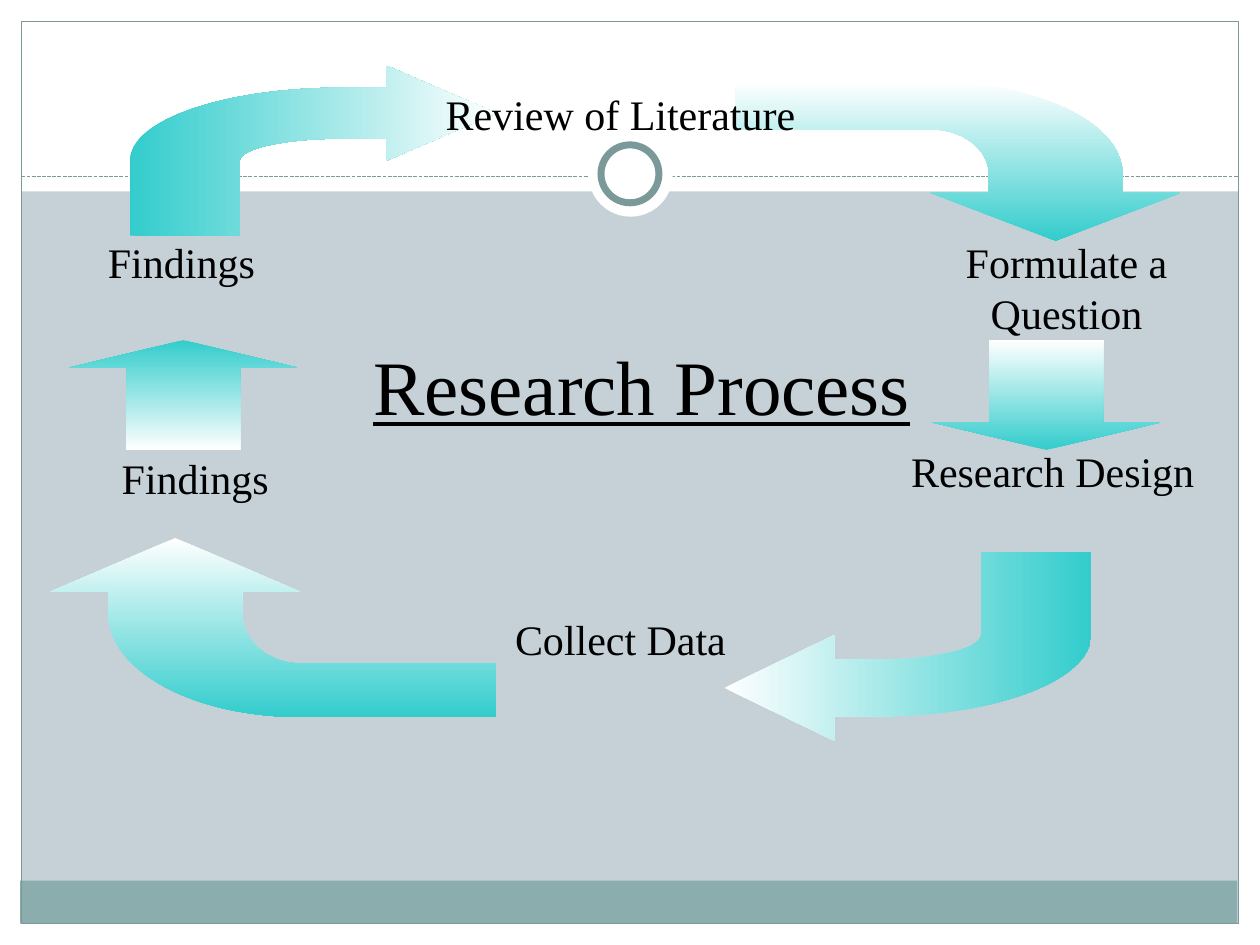
from lxml import etree
from pptx import Presentation
from pptx.dml.color import RGBColor
from pptx.enum.dml import MSO_LINE
from pptx.enum.shapes import MSO_CONNECTOR, MSO_SHAPE
from pptx.enum.text import MSO_ANCHOR, PP_ALIGN
from pptx.oxml.ns import qn
from pptx.util import Inches, Pt

RECTANGLE, OVAL, UP_ARROW = MSO_SHAPE.RECTANGLE, MSO_SHAPE.OVAL, MSO_SHAPE.UP_ARROW
STRAIGHT = MSO_CONNECTOR.STRAIGHT
DASH = MSO_LINE.SQUARE_DOT
TOP = MSO_ANCHOR.TOP
CENTER = PP_ALIGN.CENTER

WHITE = RGBColor(0xFF, 0xFF, 0xFF)
BLACK = RGBColor(0x00, 0x00, 0x00)
MIST = RGBColor(0xC5, 0xD1, 0xD7)
SAGE = RGBColor(0x8C, 0xAD, 0xAE)
SLATE = RGBColor(0x7C, 0x99, 0x9A)
TEAL = RGBColor(0x33, 0xCC, 0xCC)
FONT = "Times New Roman"

RIGHTWARD, DOWNWARD = 0, 270

OUTER_BEND = [(0.68, 0), (0.87, 0.26), (0.87, 0.58)]
INNER_BEND = [(0.57, 0.42), (0.51, 0.3), (0.44, 0.3)]
ARROW_HEAD = [(0.87, 0.7), (1, 0.7), (0.72, 1), (0.44, 0.7), (0.57, 0.7)]
BENT_ARROW = [(0, 0), (0.44, 0), *OUTER_BEND, *ARROW_HEAD, (0.57, 0.58), *INNER_BEND, (0, 0.3)]
BEND_STARTS = [BENT_ARROW.index(bend[0]) for bend in (OUTER_BEND, INNER_BEND)]


def write_text(box, text, size=24, underline=None):
    frame = box.text_frame
    frame.word_wrap = True
    frame.vertical_anchor = TOP
    para = frame.paragraphs[0]
    para.alignment = CENTER
    span = para.add_run()
    span.text = text
    span.font.name = FONT
    span.font.size = Pt(size)
    span.font.underline = underline
    span.font.color.rgb = BLACK


def round_bends(shape):
    outline = next(shape._element.iter(qn("a:path")))
    steps = list(outline)
    for start in BEND_STARTS:
        curve = etree.Element(qn("a:cubicBezTo"))
        steps[start].addprevious(curve)
        for step in steps[start:start + 3]:
            curve.append(step[0])
            outline.remove(step)


class SlideBuilder:
    """Draws styled elements on the current slide."""

    def __init__(self, page):
        self.page = page
        self.shapes = page.shapes

    def background(self, color):
        fill = self.page.background.fill
        fill.solid()
        fill.fore_color.rgb = color

    def title(self, text, left, top, width, height, **style):
        box = self.shapes.title
        box.left, box.top = Inches(left), Inches(top)
        box.width, box.height = Inches(width), Inches(height)
        write_text(box, text, **style)

    def label(self, text, left, top, width, height=0.5):
        box = self.shapes.add_textbox(*map(Inches, (left, top, width, height)))
        write_text(box, text)

    def panel(self, kind, left, top, width, height, fill=None, line=None, weight=0.75):
        shape = self.shapes.add_shape(kind, *map(Inches, (left, top, width, height)))
        shape.shadow.inherit = False
        if fill is None:
            shape.fill.background()
        else:
            shape.fill.solid()
            shape.fill.fore_color.rgb = fill
        if line is None:
            shape.line.fill.background()
        else:
            shape.line.color.rgb = line
            shape.line.width = Pt(weight)
        return shape

    def dashed_rule(self, left, right, top):
        rule = self.shapes.add_connector(STRAIGHT, *map(Inches, (left, top, right, top)))
        rule.line.color.rgb = SLATE
        rule.line.width = Pt(0.75)
        rule.line.dash_style = DASH
        etree.SubElement(rule._element.spPr, qn("a:effectLst"))

    def shade(self, shape, colors, angle):
        shape.fill.gradient()
        shape.fill.gradient_angle = angle
        for stop, color in zip(shape.fill.gradient_stops, colors):
            stop.color.rgb = color

    def block_arrow(self, left, top, rotation=0):
        arrow = self.panel(UP_ARROW, left, top, 1.81, 0.87)
        arrow.adjustments[0], arrow.adjustments[1] = 0.5, 0.25
        arrow.rotation = rotation
        self.shade(arrow, (TEAL, WHITE), DOWNWARD)

    def bent_arrow(self, corner, along, across, colors, angle):
        points = [
            tuple(Inches(corner[i] + u * along[i] + v * across[i]) for i in (0, 1))
            for u, v in BENT_ARROW
        ]
        builder = self.shapes.build_freeform(*points[0])
        builder.add_line_segments(points[1:], close=True)
        arrow = builder.convert_to_shape()
        round_bends(arrow)
        arrow.shadow.inherit = False
        arrow.line.fill.background()
        self.shade(arrow, colors, angle)


def main():
    deck = Presentation()
    deck.slide_width, deck.slide_height = Inches(10), Inches(7.5)
    slide = SlideBuilder(deck.slides.add_slide(deck.slide_layouts[5]))

    slide.background(MIST)
    for margin in ((0, 7.33, 10, 0.17), (0, 0, 10, 1.52), (0, 0, 0.17, 7.5), (9.83, 0, 0.17, 7.5)):
        slide.panel(RECTANGLE, *margin, fill=WHITE)
    slide.panel(RECTANGLE, 0.16, 6.99, 9.66, 0.34, fill=SAGE)
    slide.panel(RECTANGLE, 0.17, 0.17, 9.66, 7.16, line=SLATE)
    slide.dashed_rule(0.17, 9.83, 1.4)
    slide.panel(OVAL, 4.67, 1.05, 0.67, 0.67, fill=WHITE)
    slide.panel(OVAL, 4.77, 1.15, 0.46, 0.46, fill=WHITE, line=SLATE, weight=4)

    slide.title("Research Process", 2.36, 2.64, 5.47, 1.25, size=44, underline=True)
    slide.label("Formulate a Question", 7.48, 1.83, 1.97, 0.9)
    slide.label("Research Design", 6.74, 3.49, 3.23)
    slide.label("Collect Data", 3.39, 4.82, 3.07)
    slide.label("Findings", 0.47, 3.54, 2.16)
    slide.label("Findings", 0.36, 1.83, 2.16)

    slide.bent_arrow((5.83, 0.65), (3.54, 0), (0, 1.26), (WHITE, TEAL), DOWNWARD)
    slide.bent_arrow((3.94, 5.69), (-3.54, 0), (0, -1.42), (WHITE, TEAL), DOWNWARD)
    slide.bent_arrow((1.03, 1.87), (0, -1.35), (2.91, 0), (TEAL, WHITE), RIGHTWARD)
    slide.bent_arrow((8.66, 4.38), (0, 1.5), (-2.91, 0), (WHITE, TEAL), RIGHTWARD)
    slide.block_arrow(0.55, 2.7)
    slide.block_arrow(7.4, 2.7, rotation=180)
    slide.label("Review of Literature", 3.39, 0.65, 3.07)

    deck.save("out.pptx")


if __name__ == "__main__":
    main()
